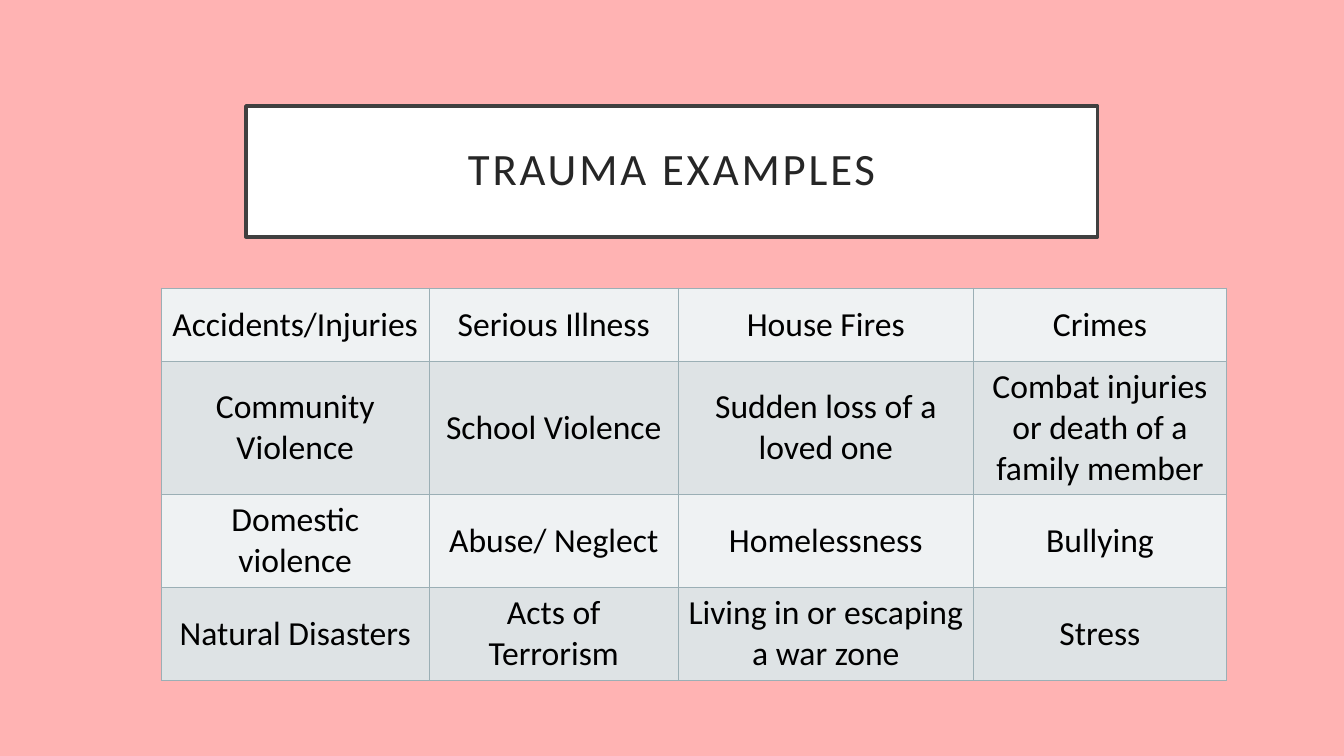
import lxml.etree
import pptx
import pptx.dml.color
import pptx.enum.text
import pptx.oxml.ns
import pptx.util
from pptx.util import Cm

FONT = "Calibri"
COLORS = {
    "background": "FFB3B3",
    "title_fill": "FFFFFF",
    "title_line": "404040",
    "title_text": "262626",
    "cell_text": "000000",
    "cell_border": "9BAFB5",
    "light_row": "EFF2F3",
    "dark_row": "DEE3E5",
}
COLUMN_WIDTHS = [6.76, 6.27, 7.44, 6.38]
ROW_HEIGHTS = [1.85, 3.35, 2.34, 2.34]
TRAUMA_EXAMPLES = [
    ["Accidents/Injuries", "Serious Illness", "House Fires", "Crimes"],
    ["Community Violence", "School Violence", "Sudden loss of a loved one",
     "Combat injuries or death of a family member"],
    ["Domestic violence", "Abuse/ Neglect", "Homelessness", "Bullying"],
    ["Natural Disasters", "Acts of Terrorism",
     "Living in or escaping a war zone", "Stress"],
]


def color(name):
    return pptx.dml.color.RGBColor.from_string(COLORS[name])


def fill_solid(fill, color_name):
    fill.solid()
    fill.fore_color.rgb = color(color_name)


def format_paragraph(paragraph, size, color_name):
    paragraph.alignment = pptx.enum.text.PP_ALIGN.CENTER
    for run in paragraph.runs:
        run.font.name = FONT
        run.font.size = pptx.util.Pt(size)
        run.font.color.rgb = color(color_name)


def format_title(title, text):
    title.left, title.top = Cm(6.2), Cm(2.67)
    title.width, title.height = Cm(21.46), Cm(3.3)
    fill_solid(title.fill, "title_fill")
    title.line.color.rgb = color("title_line")
    title.line.width = pptx.util.Pt(2.5)
    frame = title.text_frame
    frame.text = text
    frame.word_wrap = True
    frame.auto_size = pptx.enum.text.MSO_AUTO_SIZE.NONE
    frame.vertical_anchor = pptx.enum.text.MSO_ANCHOR.MIDDLE
    frame.margin_left = frame.margin_right = Cm(0.5)
    frame.margin_top = frame.margin_bottom = Cm(0.5)
    paragraph = frame.paragraphs[0]
    paragraph.line_spacing = 0.9
    format_paragraph(paragraph, 32, "title_text")
    # Letter spacing is in hundredths of a point.
    paragraph.runs[0].font._element.set("spc", "200")


def add_cell_borders(cell):
    properties = cell._tc.get_or_add_tcPr()
    qn = pptx.oxml.ns.qn
    for position, side in enumerate(("lnL", "lnR", "lnT", "lnB")):
        line = lxml.etree.Element(qn(f"a:{side}"), w=str(pptx.util.Pt(1)))
        fill = lxml.etree.SubElement(line, qn("a:solidFill"))
        lxml.etree.SubElement(fill, qn("a:srgbClr"), val=COLORS["cell_border"])
        properties.insert(position, line)


def format_cell(cell, text, fill_name):
    cell.text_frame.text = text
    cell.vertical_anchor = pptx.enum.text.MSO_ANCHOR.MIDDLE
    format_paragraph(cell.text_frame.paragraphs[0], 24, "cell_text")
    fill_solid(cell.fill, fill_name)
    add_cell_borders(cell)


def add_examples_table(slide):
    frame = slide.shapes.add_table(
        len(ROW_HEIGHTS), len(COLUMN_WIDTHS), Cm(4.06), Cm(7.26),
        Cm(sum(COLUMN_WIDTHS)), Cm(sum(ROW_HEIGHTS)))
    table = frame.table
    table.first_row = False
    for column, width in zip(table.columns, COLUMN_WIDTHS):
        column.width = Cm(width)
    for row, height in zip(table.rows, ROW_HEIGHTS):
        row.height = Cm(height)
    for row_index, texts in enumerate(TRAUMA_EXAMPLES):
        fill_name = "dark_row" if row_index % 2 else "light_row"
        for column_index, text in enumerate(texts):
            format_cell(table.cell(row_index, column_index), text, fill_name)


def main():
    presentation = pptx.Presentation()
    presentation.slide_width, presentation.slide_height = Cm(33.87), Cm(19.05)
    title_only = presentation.slide_layouts[5]
    slide = presentation.slides.add_slide(title_only)
    fill_solid(slide.background.fill, "background")
    format_title(slide.shapes.title, "TRAUMA EXAMPLES")
    add_examples_table(slide)
    presentation.save("out.pptx")


if __name__ == "__main__":
    main()
